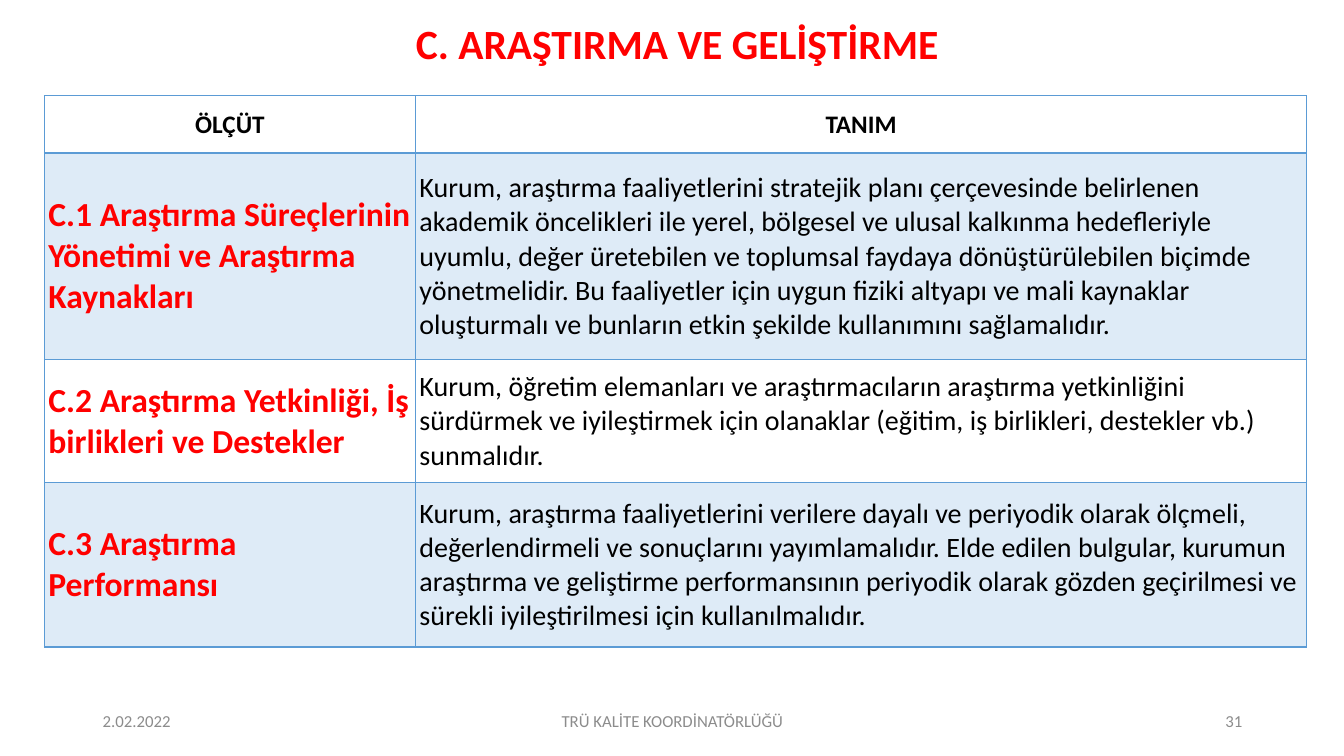
import dataclasses

import lxml.etree
import pptx
import pptx.dml.color
import pptx.enum.text
import pptx.oxml.ns
import pptx.util

PX = 9144
FONT = "Calibri"
HUES = {"red": "FF0000", "ink": "000000", "gray": "8C8C8C", "line": "5B9BD5", "band": "DEEBF7"}
ALIGN = pptx.enum.text.PP_ALIGN
MIDDLE = pptx.enum.text.MSO_ANCHOR.MIDDLE


@dataclasses.dataclass(frozen=True)
class Style:
    size: float
    hue: str
    bold: bool = False
    align: ALIGN = ALIGN.LEFT


@dataclasses.dataclass(frozen=True)
class Label:
    text: str
    left: int
    top: int
    width: int
    height: int
    style: Style
    pitch: float = 1.0


@dataclasses.dataclass(frozen=True)
class Row:
    name: str
    body: str
    height: int


HEAD = Style(18, "ink", True, ALIGN.CENTER)
NAME = Style(24, "red", True)
BODY = Style(20, "ink")

LABELS = [
    Label("C. ARAŞTIRMA VE GELİŞTİRME", 97, 19, 1150, 54, Style(29.7, "red", True, ALIGN.CENTER), 0.9),
    Label("2.02.2022", 92, 695, 300, 40, Style(12, "gray")),
    Label("TRÜ KALİTE KOORDİNATÖRLÜĞÜ", 442, 695, 450, 40, Style(12, "gray", align=ALIGN.CENTER)),
    Label("31", 942, 695, 300, 40, Style(12, "gray", align=ALIGN.RIGHT)),
]

COLS = [368, 884]
ROWS = [
    Row("ÖLÇÜT", "TANIM", 57),
    Row(
        "C.1 Araştırma Süreçlerinin Yönetimi ve Araştırma Kaynakları",
        "Kurum, araştırma faaliyetlerini stratejik planı çerçevesinde belirlenen akademik "
        "öncelikleri ile yerel, bölgesel ve ulusal kalkınma hedefleriyle uyumlu, değer "
        "üretebilen ve toplumsal faydaya dönüştürülebilen biçimde yönetmelidir. Bu "
        "faaliyetler için uygun fiziki altyapı ve mali kaynaklar oluşturmalı ve bunların "
        "etkin şekilde kullanımını sağlamalıdır.",
        205,
    ),
    Row(
        "C.2 Araştırma Yetkinliği, İş birlikleri ve Destekler",
        "Kurum, öğretim elemanları ve araştırmacıların araştırma yetkinliğini sürdürmek ve "
        "iyileştirmek için olanaklar (eğitim, iş birlikleri, destekler vb.) sunmalıdır.",
        122,
    ),
    Row(
        "C.3 Araştırma Performansı",
        "Kurum, araştırma faaliyetlerini verilere dayalı ve periyodik olarak ölçmeli, "
        "değerlendirmeli ve sonuçlarını yayımlamalıdır. Elde edilen bulgular, kurumun "
        "araştırma ve geliştirme performansının periyodik olarak gözden geçirilmesi ve "
        "sürekli iyileştirilmesi için kullanılmalıdır.",
        163,
    ),
]


def write(frame, text: str, style: Style, pitch: float = 1.0) -> None:
    frame.text = text
    para = frame.paragraphs[0]
    para.alignment = style.align
    para.line_spacing = pitch
    font = para.runs[0].font
    font.name = FONT
    font.size = pptx.util.Pt(style.size)
    font.bold = style.bold
    font.color.rgb = pptx.dml.color.RGBColor.from_string(HUES[style.hue])


def put_label(slide, label: Label) -> None:
    spots = (label.left, label.top, label.width, label.height)
    box = slide.shapes.add_textbox(*(spot * PX for spot in spots))
    box.text_frame.word_wrap = True
    box.text_frame.vertical_anchor = MIDDLE
    write(box.text_frame, label.text, label.style, label.pitch)


def rule(cell, sides: dict[str, int]) -> None:
    props = cell._tc.get_or_add_tcPr()
    name = pptx.oxml.ns.qn
    for side, width in sides.items():
        line = lxml.etree.SubElement(props, name(f"a:ln{side}"), w=str(pptx.util.Pt(width)))
        fill = lxml.etree.SubElement(line, name("a:solidFill"))
        lxml.etree.SubElement(fill, name("a:srgbClr"), val=HUES["line"])


def put_cell(cell, text: str, style: Style, row: int) -> None:
    cell.vertical_anchor = MIDDLE
    cell.margin_left = cell.margin_right = 4 * PX
    cell.margin_top = cell.margin_bottom = 0
    write(cell.text_frame, text, style)
    rule(cell, {"L": 1, "R": 1, "T": 2 if row == 1 else 1, "B": 2 if row == 0 else 1})
    if row % 2:
        cell.fill.solid()
        cell.fill.fore_color.rgb = pptx.dml.color.RGBColor.from_string(HUES["band"])
    else:
        cell.fill.background()


def put_table(slide, left: int, top: int) -> None:
    height = sum(row.height for row in ROWS)
    frame = slide.shapes.add_table(
        len(ROWS), len(COLS), left * PX, top * PX, sum(COLS) * PX, height * PX
    )
    table = frame.table
    table.first_row = table.horz_banding = False
    for col, width in zip(table.columns, COLS):
        col.width = width * PX
    for num, row in enumerate(ROWS):
        table.rows[num].height = row.height * PX
        styles = (NAME, BODY) if num else (HEAD, HEAD)
        for col, (text, style) in enumerate(zip((row.name, row.body), styles)):
            put_cell(table.cell(num, col), text, style, num)


def main() -> None:
    deck = pptx.Presentation()
    deck.slide_width = 1333 * PX
    deck.slide_height = 750 * PX
    slide = deck.slides.add_slide(deck.slide_layouts[6])
    put_table(slide, 44, 95)
    for label in LABELS:
        put_label(slide, label)
    deck.save("out.pptx")


if __name__ == "__main__":
    main()
